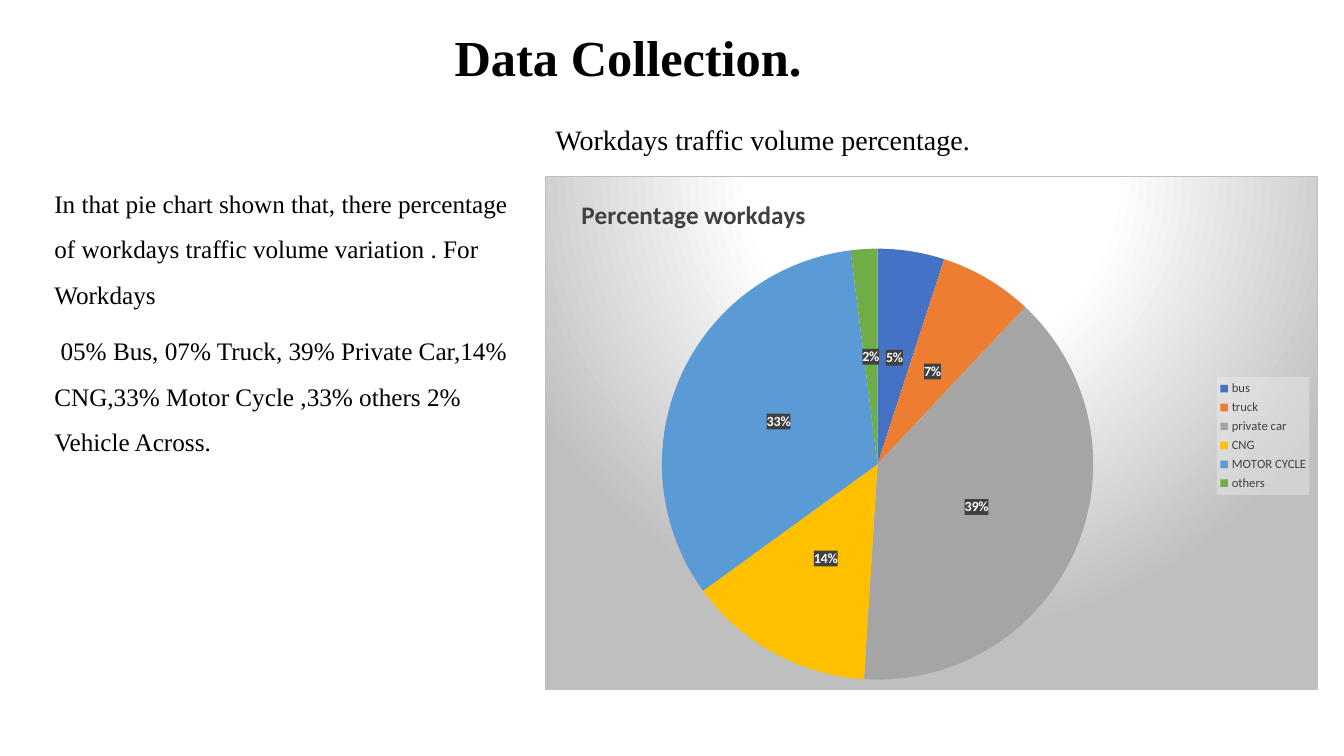
from lxml.etree import fromstring
from pptx import Presentation
from pptx.chart.data import CategoryChartData
from pptx.dml.color import RGBColor
from pptx.enum.chart import XL_CHART_TYPE, XL_LABEL_POSITION, XL_LEGEND_POSITION
from pptx.enum.text import MSO_ANCHOR
from pptx.oxml.ns import nsdecls, qn
from pptx.util import Inches, Pt

BLACK = RGBColor(0x00, 0x00, 0x00)
WHITE = RGBColor(0xFF, 0xFF, 0xFF)
DARK = RGBColor(0x40, 0x40, 0x40)
LIGHT = RGBColor(0xF2, 0xF2, 0xF2)
SILVER = RGBColor(0xBF, 0xBF, 0xBF)
VEHICLES = [
    ("bus", 5, RGBColor(0x44, 0x72, 0xC4)),
    ("truck", 7, RGBColor(0xED, 0x7D, 0x31)),
    ("private car", 39, RGBColor(0xA5, 0xA5, 0xA5)),
    ("CNG", 14, RGBColor(0xFF, 0xC0, 0x00)),
    ("MOTOR CYCLE", 33, RGBColor(0x5B, 0x9B, 0xD5)),
    ("others", 2, RGBColor(0x70, 0xAD, 0x47)),
]
SUMMARY = [
    ["In that pie chart shown that, there percentage of workdays traffic volume variation",
     " . ", "For Workdays"],
    [" ", "05% Bus,", " 07",
     "% Truck, 39% Private Car,14% CNG,33% Motor Cycle ,33% others 2% Vehicle Across."],
]


def set_font(font, size, color, name="Calibri", bold=False):
    font.size, font.name, font.bold = Pt(size), name, bold
    font.color.rgb = color


def add_text(s, box, paragraphs, size, bold=False, spacing=1.0, gap=0,
             anchor=MSO_ANCHOR.TOP, wrap=True):
    tf = s.shapes.add_textbox(*map(Inches, box)).text_frame
    tf.word_wrap = wrap
    tf.vertical_anchor = anchor
    for i, runs in enumerate(paragraphs):
        p = tf.add_paragraph() if i else tf.paragraphs[0]
        p.line_spacing = spacing
        p.space_before = Pt(gap if i else 0)
        for text in runs:
            r = p.add_run()
            r.text = text
            set_font(r.font, size, BLACK, "Times New Roman", bold)


def place(element, **shares):
    for old in element.findall(qn("c:layout")):
        element.remove(old)
    target = '<c:layoutTarget val="inner"/>' if element.tag == qn("c:plotArea") else ""
    modes = "".join(f'<c:{k}Mode val="edge"/>' for k in "xy")
    values = "".join(f'<c:{k} val="{v}"/>' for k, v in shares.items())
    layout = fromstring(f'<c:layout {nsdecls("c")}><c:manualLayout>{target}{modes}'
                        f'{values}</c:manualLayout></c:layout>')
    overlay = element.find(qn("c:overlay"))
    if overlay is None:
        element.insert(0, layout)
    else:
        overlay.addprevious(layout)


def shape_props(content):
    return fromstring(f'<c:spPr {nsdecls("c", "a")}>{content}</c:spPr>')


def clear_fill(color, alpha):
    return shape_props(f'<a:solidFill><a:srgbClr val="{color}">'
                       f'<a:alpha val="{alpha * 1000}"/></a:srgbClr></a:solidFill>')


def spotlight():
    stops = "".join(f'<a:gs pos="{pos * 1000}"><a:srgbClr val="{color}"/></a:gs>'
                    for pos, color in ((0, WHITE), (39, WHITE), (100, SILVER)))
    return shape_props(
        f'<a:gradFill><a:gsLst>{stops}</a:gsLst><a:path path="circle">'
        '<a:fillToRect l="50000" t="-80000" r="50000" b="180000"/></a:path></a:gradFill>'
        f'<a:ln w="9525"><a:solidFill><a:srgbClr val="{SILVER}"/></a:solidFill></a:ln>')


def style_title(chart, text):
    chart.has_title = True
    r = chart.chart_title.text_frame.paragraphs[0].add_run()
    r.text = text
    set_font(r.font, 18, DARK, bold=True)
    place(chart.chart_title.element if hasattr(chart.chart_title, "element")
          else chart.element.find(".//" + qn("c:title")), x=0.04, y=0.03)


def style_legend(chart):
    chart.has_legend = True
    legend = chart.legend
    legend.position = XL_LEGEND_POSITION.RIGHT
    legend.include_in_layout = False
    set_font(legend.font, 9, DARK)
    element = chart.element.find(".//" + qn("c:legend"))
    place(element, x=0.87, y=0.39, w=0.12, h=0.23)
    element.find(qn("c:txPr")).addprevious(clear_fill(LIGHT, 39))


def style_labels(plot):
    plot.has_data_labels = True
    labels = plot.data_labels
    labels.show_percentage = True
    labels.show_value = False
    labels.number_format = "0%"
    labels.number_format_is_linked = False
    labels.position = XL_LABEL_POSITION.CENTER
    set_font(labels.font, 10, WHITE, bold=True)


def add_pie(s, box):
    data = CategoryChartData()
    data.categories = [name for name, _, _ in VEHICLES]
    data.add_series("Series 1", [value for _, value, _ in VEHICLES])
    chart = s.shapes.add_chart(XL_CHART_TYPE.PIE, *map(Inches, box), data).chart
    set_font(chart.font, 10, BLACK)
    chart.element.find(qn("c:chart")).addnext(spotlight())
    style_title(chart, "Percentage workdays")
    style_legend(chart)
    plot = chart.plots[0]
    plot.vary_by_categories = True
    style_labels(plot)
    chart.element.find(".//" + qn("c:dLbls")).find(qn("c:txPr")).addprevious(
        clear_fill(DARK, 90))
    place(chart.element.find(".//" + qn("c:plotArea")), x=0.15, y=0.14, w=0.56, h=0.84)
    for i, (_, _, color) in enumerate(VEHICLES):
        fill = plot.series[0].points[i].format.fill
        fill.solid()
        fill.fore_color.rgb = color


def main():
    prs = Presentation()
    prs.slide_width, prs.slide_height = Inches(13.33), Inches(7.5)
    s = prs.slides.add_slide(prs.slide_layouts[6])
    add_text(s, (5.41, 1.12, 5.36, 0.56), [["Workdays traffic volume percentage."]], 20,
             spacing=0.9, anchor=MSO_ANCHOR.MIDDLE)
    add_text(s, (0.44, 1.67, 4.83, 2.89), SUMMARY, 18, spacing=1.5, gap=7.9)
    add_pie(s, (5.41, 1.75, 7.66, 5.1))
    add_text(s, (4.41, 0.21, 3.68, 0.71), [["Data Collection."]], 36, bold=True, wrap=False)
    prs.save("out.pptx")


if __name__ == "__main__":
    main()
